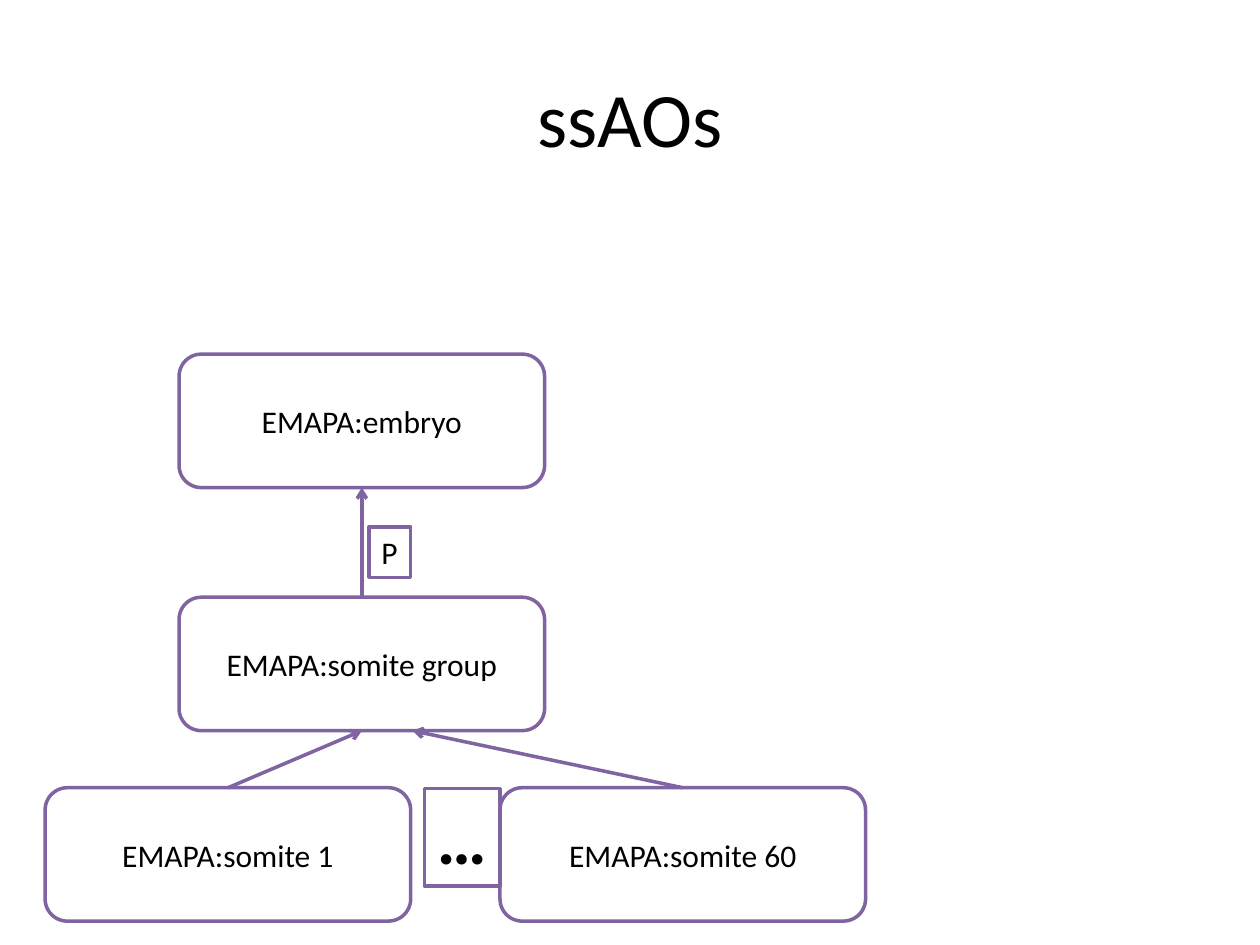
from dataclasses import dataclass

from lxml.etree import SubElement
from pptx import Presentation
from pptx.dml.color import RGBColor
from pptx.enum.shapes import MSO_CONNECTOR as Connector, MSO_SHAPE as Preset
from pptx.enum.text import MSO_ANCHOR as Anchor, MSO_AUTO_SIZE as AutoSize, PP_ALIGN as Align
from pptx.oxml.ns import qn
from pptx.util import Cm, Pt

TOP, BOTTOM = 0, 2


@dataclass(frozen=True)
class Theme:
    """Colours, font and sizes of the slide."""
    font: str = "Calibri"
    text: RGBColor = RGBColor(0, 0, 0)
    fill: RGBColor = RGBColor(255, 255, 255)
    outline: RGBColor = RGBColor(0x80, 0x64, 0xA2)
    line_width: int = 2
    title_size: int = 44
    body_size: int = 18
    ellipsis_size: int = 40
    node_width: float = 7.37
    node_height: float = 2.69


class DiagramBuilder:
    """Draws styled elements on the current slide."""

    def __init__(self, slide, theme):
        """Keep the slide and its theme."""
        self.slide = slide
        self.theme = theme

    def add_text(self, shape, text, size, align, bold=False):
        """Put one formatted run into a shape."""
        paragraph = shape.text_frame.paragraphs[0]
        paragraph.alignment = align
        run = paragraph.add_run()
        run.text = text
        run.font.name = self.theme.font
        run.font.size = Pt(size)
        run.font.bold = bold
        run.font.color.rgb = self.theme.text

    def outline(self, line):
        """Apply the common line style."""
        line.color.rgb = self.theme.outline
        line.width = Pt(self.theme.line_width)

    def title(self, text):
        """Place and fill the title placeholder."""
        shape = self.slide.shapes.title
        shape.left, shape.top = Cm(1.27), Cm(0.76)
        shape.width, shape.height = Cm(22.86), Cm(3.18)
        shape.text_frame.vertical_anchor = Anchor.MIDDLE
        self.add_text(shape, text, self.theme.title_size, Align.CENTER)

    def box(self, preset, left, top, width, height):
        """Add a filled and outlined shape."""
        shape = self.slide.shapes.add_shape(preset, Cm(left), Cm(top), Cm(width), Cm(height))
        shape.shadow.inherit = False
        shape.fill.solid()
        shape.fill.fore_color.rgb = self.theme.fill
        self.outline(shape.line)
        return shape

    def node(self, text, left, top):
        """Add a rounded ontology term."""
        theme = self.theme
        shape = self.box(Preset.ROUNDED_RECTANGLE, left, top, theme.node_width, theme.node_height)
        shape.text_frame.vertical_anchor = Anchor.MIDDLE
        self.add_text(shape, text, theme.body_size, Align.CENTER)
        return shape

    def label(self, text, left, top, width, height, size, bold=False):
        """Add a square label that fits its text."""
        shape = self.box(Preset.RECTANGLE, left, top, width, height)
        frame = shape.text_frame
        frame.word_wrap = False
        frame.auto_size = AutoSize.SHAPE_TO_FIT_TEXT
        frame.vertical_anchor = Anchor.TOP
        self.add_text(shape, text, size, Align.LEFT, bold)

    def arrow(self, child, parent, offset=0):
        """Point from a child's top to its parent's bottom, shifted by an offset."""
        end_x = parent.left + parent.width // 2 + Cm(offset)
        end_y = parent.top + parent.height
        connector = self.slide.shapes.add_connector(
            Connector.STRAIGHT, child.left + child.width // 2, child.top, end_x, end_y)
        connector.begin_connect(child, TOP)
        if not offset:
            connector.end_connect(parent, BOTTOM)
        self.outline(connector.line)
        properties = connector.element.spPr
        SubElement(properties.find(qn("a:ln")), qn("a:tailEnd"), type="arrow")
        SubElement(properties, qn("a:effectLst"))


def main():
    """Build and save the slide."""
    presentation = Presentation()
    presentation.slide_width, presentation.slide_height = Cm(25.4), Cm(19.05)
    theme = Theme()
    slide = presentation.slides.add_slide(presentation.slide_layouts[5])
    builder = DiagramBuilder(slide, theme)

    builder.title("ssAOs")
    group = builder.node("EMAPA:somite group", 3.61, 12.04)
    embryo = builder.node("EMAPA:embryo", 3.61, 7.14)
    builder.arrow(group, embryo)
    builder.label("P", 7.44, 10.62, 0.84, 1.02, theme.body_size)
    for text, left, offset in (("EMAPA:somite 1", 0.91, 0), ("EMAPA:somite 60", 10.08, 1.02)):
        somite = builder.node(text, left, 15.88)
        builder.arrow(somite, group, offset)
    builder.label("…", 8.56, 15.9, 1.52, 1.96, theme.ellipsis_size, bold=True)

    presentation.save("out.pptx")


if __name__ == "__main__":
    main()
